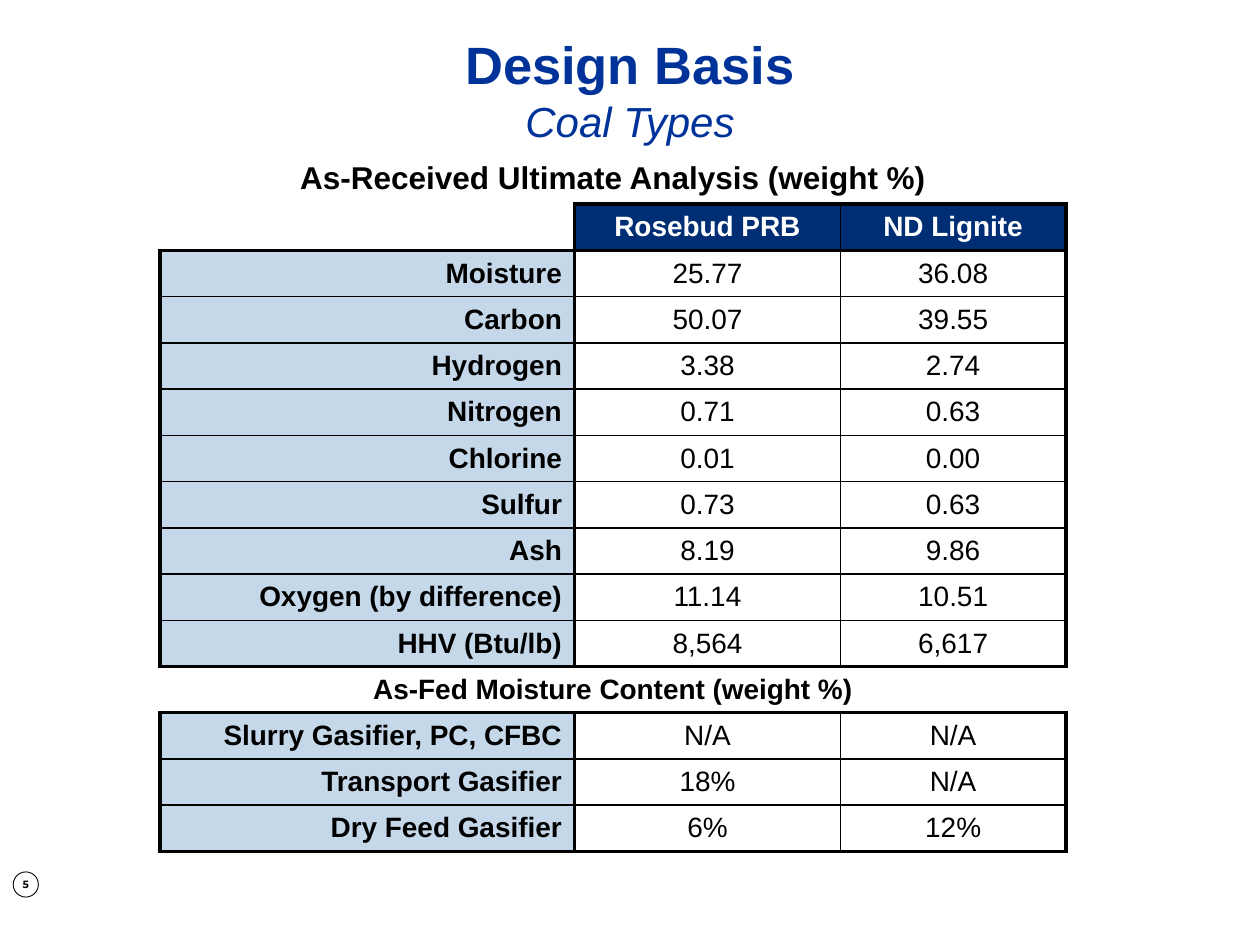
import pptx
import pptx.util
import pptx.dml.color
import pptx.enum.shapes
import pptx.enum.text
import pptx.oxml
import pptx.oxml.ns

Inches = pptx.util.Inches
Pt = pptx.util.Pt
ALIGN = pptx.enum.text.PP_ALIGN
MIDDLE = pptx.enum.text.MSO_ANCHOR.MIDDLE

COLORS = {
    "title": "003399",
    "header": "002E74",
    "label": "C5D8E9",
    "black": "000000",
    "white": "FFFFFF",
}
NO_STYLE = "{2D5ABB26-0587-4C30-8999-92F81FD0307C}"
THICK, THIN = 2.25, 1
COLUMN_WIDTHS = (3.29, 2.11, 1.79)
TITLE_ROW_HEIGHT = 0.4

HEADING = "As-Received Ultimate Analysis (weight %)"
COALS = ("", "Rosebud PRB", "ND Lignite")
ANALYSIS = [
    ("Moisture", "25.77", "36.08"),
    ("Carbon", "50.07", "39.55"),
    ("Hydrogen", "3.38", "2.74"),
    ("Nitrogen", "0.71", "0.63"),
    ("Chlorine", "0.01", "0.00"),
    ("Sulfur", "0.73", "0.63"),
    ("Ash", "8.19", "9.86"),
    ("Oxygen (by difference)", "11.14", "10.51"),
    ("HHV (Btu/lb)", "8,564", "6,617"),
]
CAPTION = "As-Fed Moisture Content (weight %)"
AS_FED = [
    ("Slurry Gasifier, PC, CFBC", "N/A", "N/A"),
    ("Transport Gasifier", "18%", "N/A"),
    ("Dry Feed Gasifier", "6%", "12%"),
]


def color(name):
    return pptx.dml.color.RGBColor.from_string(COLORS[name])


def add_span(para, text, ink, **formats):
    span = para.add_run()
    span.text = text
    span.font.color.rgb = color(ink)
    for name, value in ({"name": "Arial"} | formats).items():
        setattr(span.font, name, value)


def add_text_box(page, left, top, width, height, margin):
    """Add a wrapped, centred text box and return its first paragraph."""
    box = page.shapes.add_textbox(*map(Inches, (left, top, width, height)))
    frame = box.text_frame
    formats = {"word_wrap": True, "vertical_anchor": MIDDLE,
               "margin_top": Inches(margin), "margin_bottom": Inches(margin)}
    for name, value in formats.items():
        setattr(frame, name, value)
    frame.paragraphs[0].alignment = ALIGN.CENTER
    return frame.paragraphs[0]


def add_title(page, left, top, width, height):
    para = add_text_box(page, left, top, width, height, 0.05)
    add_span(para, "Design Basis", "title", size=Pt(30), bold=True)
    para.add_line_break()
    add_span(para, "Coal Types", "title", size=Pt(24), italic=True)


def add_page_number(page, left, top, width, height):
    size = height
    circle = page.shapes.add_shape(
        pptx.enum.shapes.MSO_SHAPE.OVAL,
        Inches(left + (width - size) / 2), Inches(top), Inches(size), Inches(size))
    circle.shadow.inherit = False
    circle.fill.solid()
    circle.fill.fore_color.rgb = color("white")
    circle.line.color.rgb = color("black")
    circle.line.width = Pt(0.5)
    para = add_text_box(page, left, top, width, height, 0)
    add_span(para, "5", "black", name="Montserrat", size=Pt(6), bold=True)


def set_borders(cell, **widths):
    """Draw the sides L, R, T and B that have a width; clear the others."""
    properties = cell._tc.get_or_add_tcPr()
    for side in "LRTB":
        width = widths.get(side, 0)
        paint = (f'<a:solidFill><a:srgbClr val="{COLORS["black"]}"/></a:solidFill>'
                 if width else "<a:noFill/>")
        properties.append(pptx.oxml.parse_xml(
            f'<a:ln{side} {pptx.oxml.ns.nsdecls("a")} w="{Pt(width)}">{paint}</a:ln{side}>'))


def fill_cell(cell, text, align=ALIGN.CENTER, fill=None, ink="black", size=16, bold=True):
    cell.vertical_anchor = MIDDLE
    if fill:
        cell.fill.solid()
        cell.fill.fore_color.rgb = color(fill)
    else:
        cell.fill.background()
    para = cell.text_frame.paragraphs[0]
    para.alignment = align
    add_span(para, text, ink, size=Pt(size), bold=bold)


def shrink_empty_cell(cell):
    """Give an empty cell small text, so that it does not stretch its row."""
    para = cell.text_frame.paragraphs[0]
    para._p.append(pptx.oxml.parse_xml(
        f'<a:endParaRPr {pptx.oxml.ns.nsdecls("a")} sz="1200"/>'))


def fill_heading(table, row, text, size, **borders):
    for column in range(len(COLUMN_WIDTHS)):
        set_borders(table.cell(row, column), **borders)
    table.cell(row, 0).merge(table.cell(row, len(COLUMN_WIDTHS) - 1))
    fill_cell(table.cell(row, 0), text, size=size)


def fill_coal_names(table, row):
    set_borders(table.cell(row, 0), R=THICK, B=THICK)
    shrink_empty_cell(table.cell(row, 0))
    for column, name in list(enumerate(COALS))[1:]:
        cell = table.cell(row, column)
        set_borders(cell, L=THICK if column == 1 else THIN,
                    R=THIN if column == 1 else THICK, T=THICK, B=THICK)
        fill_cell(cell, name, fill="header", ink="white")


def fill_block(table, first, records):
    """Fill data rows framed by thick lines, with thin lines inside."""
    for index, record in enumerate(records):
        for column, text in enumerate(record):
            cell = table.cell(first + index, column)
            set_borders(cell,
                        L=THIN if column == 2 else THICK,
                        R=THIN if column == 1 else THICK,
                        T=THICK if index == 0 else THIN,
                        B=THICK if index == len(records) - 1 else THIN)
            if column == 0:
                fill_cell(cell, text, align=ALIGN.RIGHT, fill="label")
            else:
                fill_cell(cell, text, bold=False)


def add_coal_table(page, left, top, width, height):
    caption_row = 2 + len(ANALYSIS)
    row_count = caption_row + 1 + len(AS_FED)
    table = page.shapes.add_table(
        row_count, len(COLUMN_WIDTHS), *map(Inches, (left, top, width, height))).table
    table.first_row = table.horz_banding = False
    table._tbl.tblPr.find(pptx.oxml.ns.qn("a:tableStyleId")).text = NO_STYLE
    for column, column_width in zip(table.columns, COLUMN_WIDTHS):
        column.width = Inches(column_width)
    for row in table.rows:
        row.height = Inches((height - TITLE_ROW_HEIGHT) / (row_count - 1))
    table.rows[0].height = Inches(TITLE_ROW_HEIGHT)

    fill_heading(table, 0, HEADING, 18)
    fill_coal_names(table, 1)
    fill_block(table, 2, ANALYSIS)
    fill_heading(table, caption_row, CAPTION, 16, T=THICK, B=THICK)
    fill_block(table, caption_row + 1, AS_FED)


def main():
    deck = pptx.Presentation()
    deck.slide_width, deck.slide_height = Inches(10), Inches(7.5)
    page = deck.slides.add_slide(deck.slide_layouts[6])
    add_page_number(page, 0, 6.92, 0.41, 0.2)
    add_title(page, 0.5, 0.2, 9, 1.01)
    add_coal_table(page, 1.27, 1.22, sum(COLUMN_WIDTHS), 5.53)
    deck.save("out.pptx")


if __name__ == "__main__":
    main()
